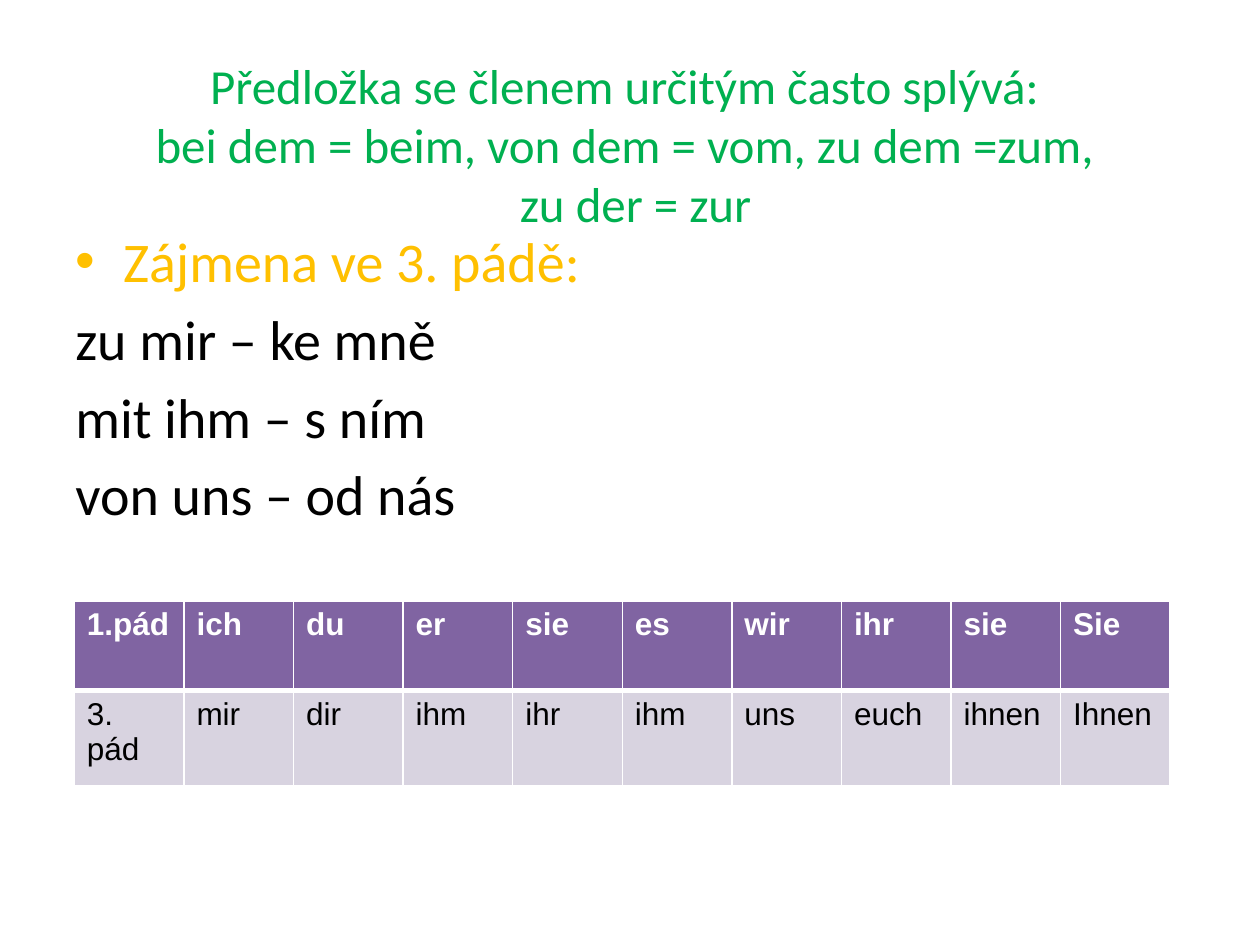
import pptx
import pptx.util
import pptx.dml.color
import pptx.enum.text
import pptx.oxml
import pptx.oxml.ns

Inches = pptx.util.Inches
Pt = pptx.util.Pt

TITLE = [
    "Předložka se členem určitým často splývá: ",
    "bei dem = beim, von dem = vom, zu dem =zum, ",
    " zu der = zur",
]
LINES = ["zu mir – ke mně", "mit ihm – s ním", "von uns – od nás"]
ROWS = [
    ["1.pád", "ich", "du", "er", "sie", "es", "wir", "ihr", "sie", "Sie"],
    ["3. pád", "mir", "dir", "ihm", "ihr", "ihm", "uns", "euch", "ihnen", "Ihnen"],
]
LOOKS = [("8064A2", "FFFFFF", True), ("D8D3E0", "000000", False)]
HEIGHTS = [0.71, 0.76]
COL = 0.87


def paint(fmt, color):
    fmt.solid()
    fmt.fore_color.rgb = pptx.dml.color.RGBColor.from_string(color)


def add_run(para, text, size, font, color, bold=False):
    run = para.add_run()
    run.text = text
    run.font.size = Pt(size)
    run.font.name = font
    run.font.bold = bold
    paint(run.font.fill, color)


def add_child(parent, tag, **attrs):
    node = parent.makeelement(pptx.oxml.ns.qn(tag), attrs)
    parent.append(node)
    return node


def set_bullet(para):
    props = para._p.get_or_add_pPr()
    props.set("marL", str(Inches(0.38)))
    props.set("indent", str(-Inches(0.38)))
    add_child(props, "a:buFont", typeface="Arial")
    add_child(props, "a:buChar", char="•")


def set_edge(cell, side, width):
    line = add_child(cell._tc.get_or_add_tcPr(), "a:" + side, w=str(Pt(width)))
    fill = add_child(line, "a:solidFill")
    add_child(fill, "a:srgbClr", val="FFFFFF")


def add_title(slide):
    title = slide.shapes.title
    title.left, title.top = Inches(0.5), Inches(0.3)
    title.width, title.height = Inches(9), Inches(2.11)
    frame = title.text_frame
    frame.word_wrap = True
    frame.auto_size = pptx.enum.text.MSO_AUTO_SIZE.NONE
    frame.vertical_anchor = pptx.enum.text.MSO_ANCHOR.MIDDLE
    frame.margin_bottom = Inches(0.48)
    para = frame.paragraphs[0]
    para.alignment = pptx.enum.text.PP_ALIGN.CENTER
    for i, text in enumerate(TITLE):
        if i:
            para.add_line_break()
        add_run(para, text, 28, "Calibri", "00B050")


def add_body(slide):
    box = slide.shapes.add_textbox(Inches(0.5), Inches(1.75), Inches(9), Inches(4.95))
    frame = box.text_frame
    frame.word_wrap = True
    head = frame.paragraphs[0]
    head.space_before = Pt(6)
    set_bullet(head)
    add_run(head, "Zájmena ve 3. pádě:", 32, "Calibri", "FFC000")
    for text in LINES:
        para = frame.add_paragraph()
        para.space_before = Pt(6)
        add_run(para, text, 32, "Calibri", "000000")


def add_grid(slide):
    count = len(ROWS[0])
    table = slide.shapes.add_table(
        len(ROWS), count, Inches(0.59), Inches(4.77),
        Inches(COL * count), Inches(sum(HEIGHTS)),
    ).table
    for col in table.columns:
        col.width = Inches(COL)
    for r, (words, look) in enumerate(zip(ROWS, LOOKS)):
        fill, color, bold = look
        table.rows[r].height = Inches(HEIGHTS[r])
        for c, word in enumerate(words):
            cell = table.cell(r, c)
            add_run(cell.text_frame.paragraphs[0], word, 18, "Arial", color, bold)
            for side in ("lnL", "lnR", "lnT", "lnB"):
                thick = side == ("lnT" if r else "lnB")
                set_edge(cell, side, 3 if thick else 1)
            paint(cell.fill, fill)


def main():
    deck = pptx.Presentation()
    deck.slide_width, deck.slide_height = Inches(10), Inches(7.5)
    slide = deck.slides.add_slide(deck.slide_layouts[5])
    add_title(slide)
    add_body(slide)
    add_grid(slide)
    deck.save("out.pptx")


if __name__ == "__main__":
    main()
